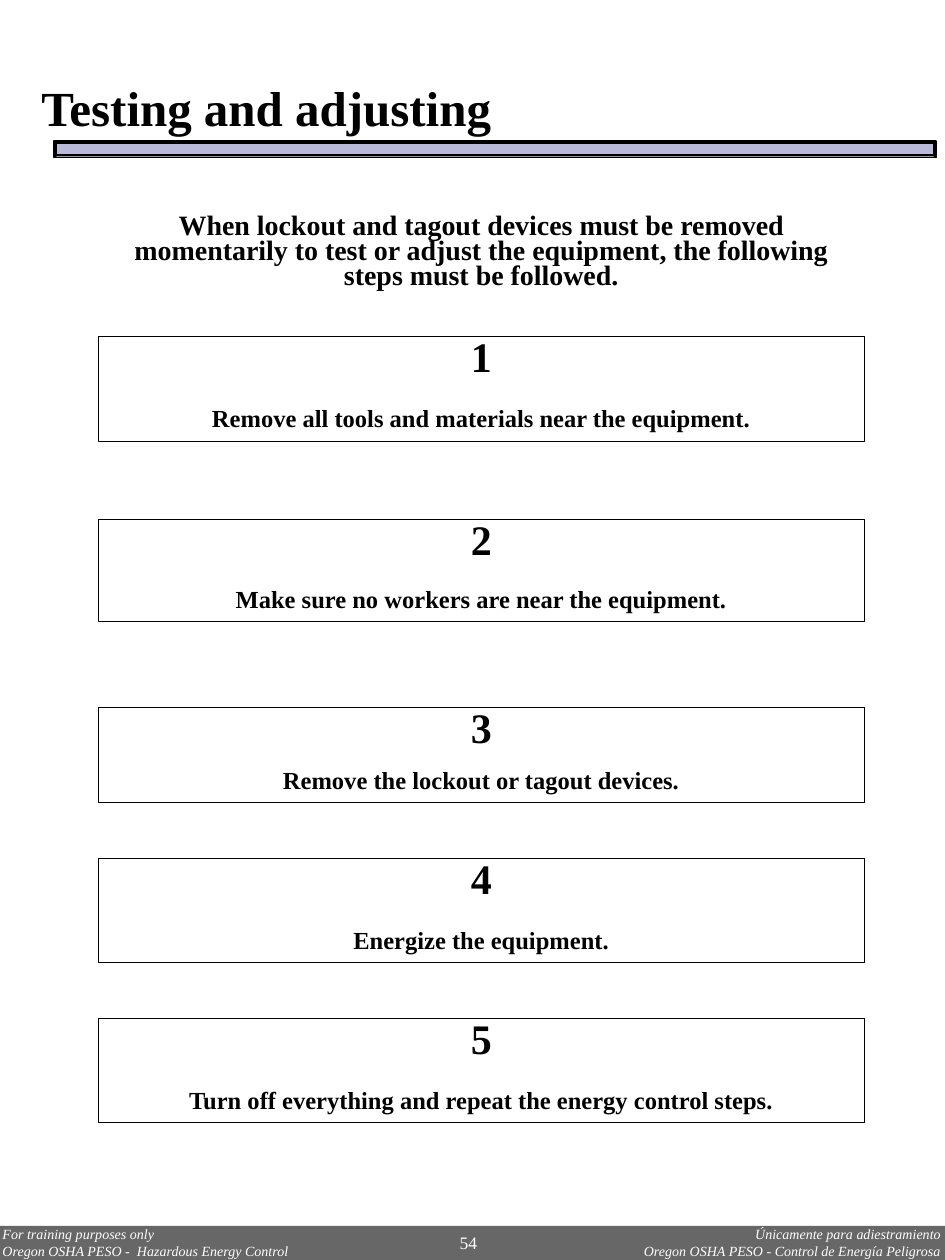
from pptx import Presentation
from pptx.dml.color import RGBColor
from pptx.enum.shapes import MSO_SHAPE as Shape
from pptx.enum.text import MSO_ANCHOR as Anchor, PP_ALIGN as Align
from pptx.util import Inches, Pt

BLACK = RGBColor(0, 0, 0)
WHITE = RGBColor(255, 255, 255)
GRAY = RGBColor(0x67, 0x67, 0x67)
LILAC = RGBColor(0xB9, 0xB9, 0xD9)

deck = Presentation()
deck.slide_width = Inches(7.5)
deck.slide_height = Inches(10)
slide = deck.slides.add_slide(deck.slide_layouts[6])


def add_box(kind, left, top, width, height, fill=None, line=None):
    box = slide.shapes.add_shape(kind, Inches(left), Inches(top), Inches(width), Inches(height))
    box.shadow.inherit = False
    if fill is None:
        box.fill.background()
    else:
        box.fill.solid()
        box.fill.fore_color.rgb = fill
    if line is None:
        box.line.fill.background()
    else:
        box.line.color.rgb = BLACK
        box.line.width = Pt(line)
    return box


def write(box, rows, align, color=BLACK, bold=True, italic=False):
    frame = box.text_frame
    frame.word_wrap = True
    frame.vertical_anchor = Anchor.TOP
    for i, (text, size, space, before) in enumerate(rows):
        para = frame.add_paragraph() if i else frame.paragraphs[0]
        para.text = text
        para.alignment = align
        para.line_spacing = space
        para.space_before = Pt(before)
        font = para.font
        font.name = "Times New Roman"
        font.size = Pt(size)
        font.bold = bold
        font.italic = italic
        font.color.rgb = color
    return frame


add_box(Shape.RECTANGLE, 0, 9.73, 7.5, 0.27, GRAY)

notes = [
    (4.07, 3.4, Align.RIGHT, ["Únicamente para adiestramiento",
                              "Oregon OSHA PESO - Control de Energía Peligrosa"]),
    (0.02, 3.34, Align.LEFT, ["For training purposes only",
                              "Oregon OSHA PESO -  Hazardous Energy Control"]),
]
for left, width, align, lines in notes:
    note = slide.shapes.add_textbox(Inches(left), Inches(9.73), Inches(width), Inches(0.27))
    frame = write(note, [(text, 8, 1.0, 0) for text in lines], align, WHITE, False, True)
    frame.margin_left = frame.margin_right = frame.margin_top = frame.margin_bottom = 0

page = slide.shapes.add_textbox(Inches(3.55), Inches(9.73), Inches(0.55), Inches(0.27))
write(page, [("54", 10, 1.0, 0)], Align.LEFT, WHITE, False)

steps = [
    (2.67, 0.83, 17, 0.75, "Remove all tools and materials near the equipment."),
    (4.12, 0.81, 12, 1.0, "Make sure no workers are near the equipment."),
    (5.61, 0.76, 12, 0.75, "Remove the lockout or tagout devices."),
    (6.81, 0.83, 17, 0.75, "Energize the equipment."),
    (8.08, 0.83, 17, 0.75, "Turn off everything and repeat the energy control steps."),
]
for num, (top, height, gap, space, text) in enumerate(steps, 1):
    step = add_box(Shape.RECTANGLE, 0.78, top, 6.08, height, line=0.25)
    write(step, [(str(num), 24, 0.75, 0), (text, 14, space, gap)], Align.CENTER)

intro = slide.shapes.add_textbox(Inches(0.78), Inches(1.66), Inches(6.08), Inches(0.7))
write(intro, [("When lockout and tagout devices must be removed momentarily to test "
               "or adjust the equipment, the following steps must be followed.",
               16, 0.75, 0)], Align.CENTER)

title = slide.shapes.add_textbox(Inches(0.23), Inches(0.57), Inches(7.1), Inches(0.57))
write(title, [("Testing and adjusting", 28, 1.0, 3)], Align.LEFT)

bar = add_box(Shape.BEVEL, 0.43, 1.12, 7, 0.13, LILAC, 1)
bar.adjustments[0] = 0.125

deck.save("out.pptx")
